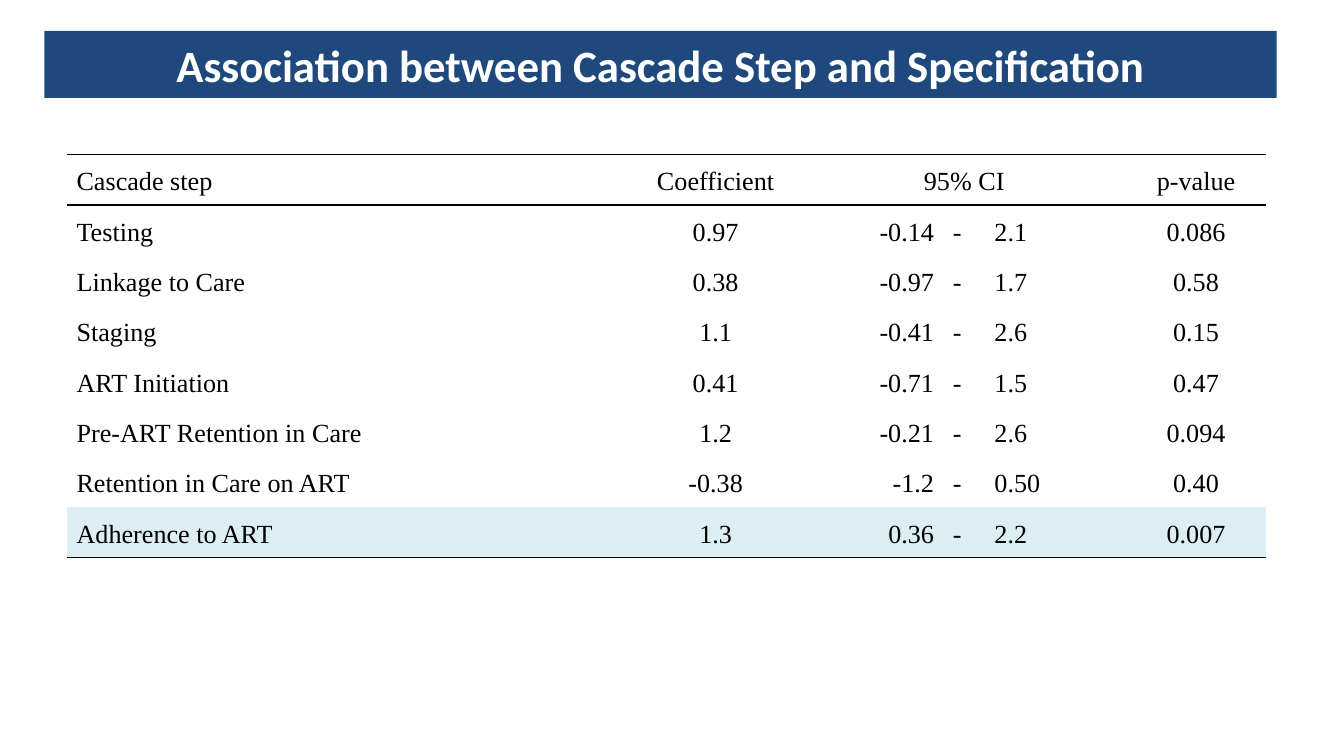
import dataclasses
import typing

import lxml.etree
import pptx
import pptx.dml.color
import pptx.enum.shapes
import pptx.enum.text
import pptx.oxml.ns
import pptx.slide
import pptx.table
import pptx.text.text
import pptx.util

Inches = pptx.util.Inches
Align = pptx.enum.text.PP_ALIGN
Middle = pptx.enum.text.MSO_ANCHOR.MIDDLE

SLIDE_WIDTH = 10
SLIDE_HEIGHT = SLIDE_WIDTH * 9 / 16
COLUMN_WIDTHS = (4.18, 1.29, 1.05, 0.31, 1.05, 1.04)
ALIGNMENTS = (Align.LEFT, Align.CENTER, Align.RIGHT, Align.LEFT, Align.LEFT, Align.CENTER)
TABLE_HEIGHT = 3
BLACK = "000000"
HIGHLIGHT = "DBEEF4"


@dataclasses.dataclass
class CascadeStep:
    name: str
    coefficient: str
    lower: str
    upper: str
    p_value: str

    def texts(self) -> tuple[str, ...]:
        return (self.name, self.coefficient, self.lower, "-", self.upper, self.p_value)


HEADER = ("Cascade step", "Coefficient", "95% CI", "", "", "p-value")
STEPS = (
    CascadeStep("Testing", "0.97", "-0.14", "2.1", "0.086"),
    CascadeStep("Linkage to Care", "0.38", "-0.97", "1.7", "0.58"),
    CascadeStep("Staging", "1.1", "-0.41", "2.6", "0.15"),
    CascadeStep("ART Initiation", "0.41", "-0.71", "1.5", "0.47"),
    CascadeStep("Pre-ART Retention in Care", "1.2", "-0.21", "2.6", "0.094"),
    CascadeStep("Retention in Care on ART", "-0.38", "-1.2", "0.50", "0.40"),
    CascadeStep("Adherence to ART", "1.3", "0.36", "2.2", "0.007"),
)


def color(value: str) -> pptx.dml.color.RGBColor:
    return pptx.dml.color.RGBColor.from_string(value)


def format_paragraph(paragraph: pptx.text.text._Paragraph, alignment: Align, font_name: str,
                     size: float, font_color: str, bold: bool = False) -> None:
    paragraph.alignment = alignment
    for span in paragraph.runs:
        span.font.name = font_name
        span.font.size = pptx.util.Pt(size)
        span.font.bold = bold
        span.font.color.rgb = color(font_color)


def set_borders(cell: pptx.table._Cell, ruled: typing.Collection[str]) -> None:
    """Draw the ruled sides (T, B) in black and clear every other side."""
    properties = cell._tc.get_or_add_tcPr()
    for side in "LRTB":
        line = lxml.etree.SubElement(properties, pptx.oxml.ns.qn(f"a:ln{side}"))
        if side in ruled:
            line.set("w", str(pptx.util.Pt(1)))
            fill = lxml.etree.SubElement(line, pptx.oxml.ns.qn("a:solidFill"))
            lxml.etree.SubElement(fill, pptx.oxml.ns.qn("a:srgbClr"), val=BLACK)
        else:
            lxml.etree.SubElement(line, pptx.oxml.ns.qn("a:noFill"))


def format_cell(cell: pptx.table._Cell, text: str, alignment: Align,
                ruled: typing.Collection[str], highlighted: bool) -> None:
    cell.margin_left = cell.margin_right = Inches(0.07)
    cell.margin_top = cell.margin_bottom = 0
    cell.vertical_anchor = Middle
    set_borders(cell, ruled)
    if highlighted:
        cell.fill.solid()
        cell.fill.fore_color.rgb = color(HIGHLIGHT)
    else:
        cell.fill.background()
    cell.text_frame.text = text
    paragraph = cell.text_frame.paragraphs[0]
    paragraph.line_spacing = 1.15
    format_paragraph(paragraph, alignment, "Times New Roman", 14, BLACK)


def add_title(page: pptx.slide.Slide, text: str) -> None:
    box = page.shapes.add_shape(pptx.enum.shapes.MSO_SHAPE.RECTANGLE,
                                Inches(0.33), Inches(0.23), Inches(9.17), Inches(0.5))
    box.shadow.inherit = False
    box.fill.solid()
    box.fill.fore_color.rgb = color("1F497D")
    box.line.fill.background()
    box.text_frame.word_wrap = True
    box.text_frame.vertical_anchor = Middle
    box.text_frame.text = text
    format_paragraph(box.text_frame.paragraphs[0], Align.CENTER, "Calibri", 24, "FFFFFF", True)


def add_results(page: pptx.slide.Slide) -> None:
    rows = [HEADER, *(step.texts() for step in STEPS)]
    last = len(rows) - 1
    table = page.shapes.add_table(len(rows), len(COLUMN_WIDTHS), Inches(0.5), Inches(1.15),
                                  Inches(sum(COLUMN_WIDTHS)), Inches(TABLE_HEIGHT)).table
    table.first_row = table.horz_banding = False
    for column, width in zip(table.columns, COLUMN_WIDTHS):
        column.width = Inches(width)
    rules = {0: "TB", 1: "T", last: "B"}
    for row, texts in enumerate(rows):
        for column, text in enumerate(texts):
            alignment = Align.CENTER if row == 0 and column > 0 else ALIGNMENTS[column]
            format_cell(table.cell(row, column), text, alignment,
                        rules.get(row, ""), row == last)
    table.cell(0, 2).merge(table.cell(0, 4))


def main() -> None:
    deck = pptx.Presentation()
    deck.slide_width, deck.slide_height = Inches(SLIDE_WIDTH), Inches(SLIDE_HEIGHT)
    page = deck.slides.add_slide(deck.slide_layouts[6])
    add_results(page)
    add_title(page, "Association between Cascade Step and Specification")
    deck.save("out.pptx")


if __name__ == "__main__":
    main()
